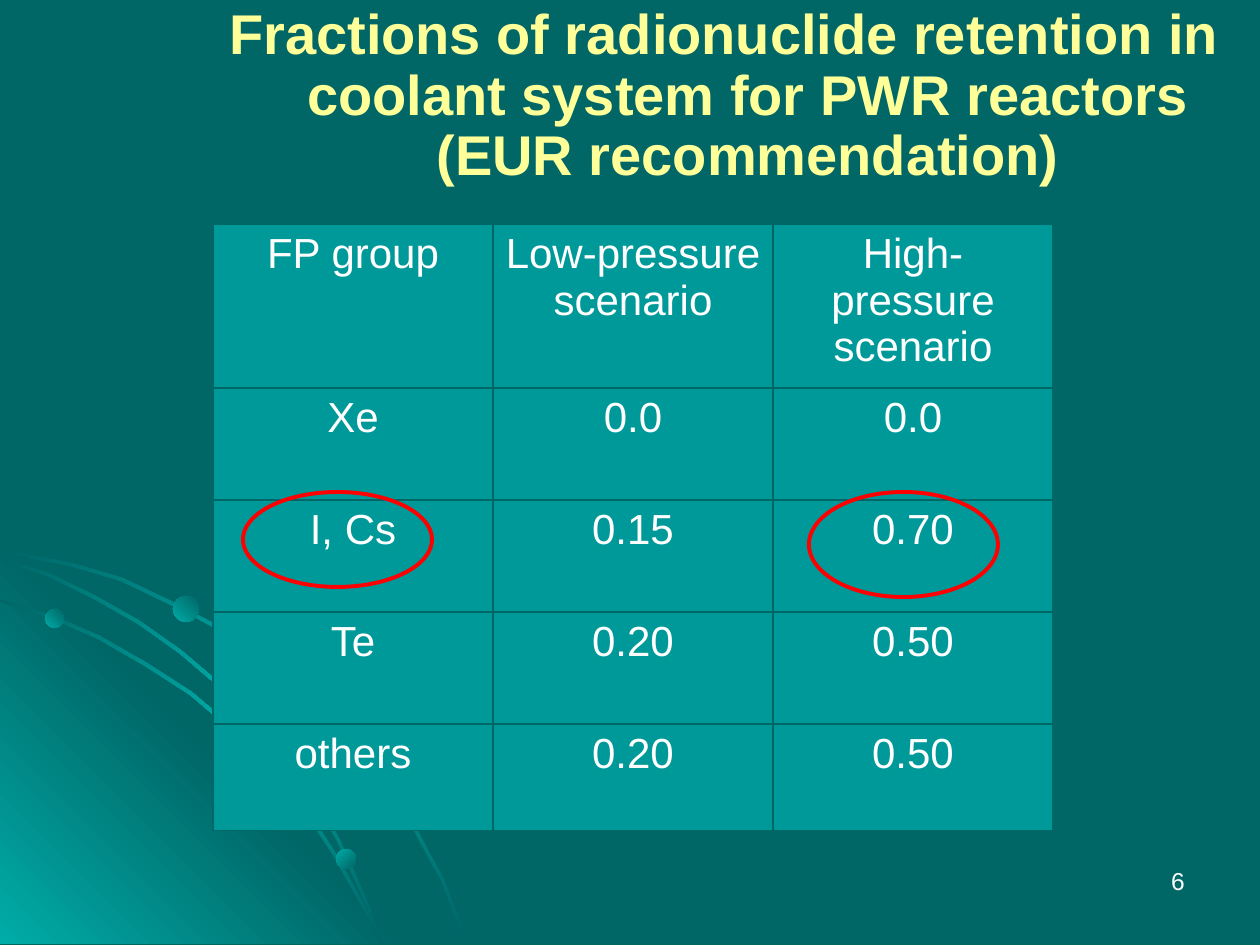
from dataclasses import dataclass

from lxml.etree import SubElement
from pptx import Presentation
from pptx.dml.color import RGBColor
from pptx.enum.shapes import MSO_SHAPE
from pptx.enum.text import MSO_ANCHOR, MSO_AUTO_SIZE, PP_ALIGN
from pptx.oxml.ns import qn
from pptx.util import Emu, Pt

PX = 914400 / 126
WIDTH, HEIGHT = 1260, 945


@dataclass(frozen=True)
class Theme:
    font: str = "Arial"
    background: str = "006666"
    glow: str = "00ACA8"
    cell: str = "009999"
    text: str = "FFFFFF"
    title: str = "FFFF99"
    mark: str = "FF0000"
    title_size: int = 32
    table_size: int = 24
    number_size: int = 14
    mark_width: float = 2.25
    border_width: float = 1


def px(length):
    return Emu(round(length * PX))


class SlideBuilder:
    def __init__(self, slide, theme):
        self.slide, self.theme = slide, theme
        fill = slide.background.fill
        fill.solid()
        fill.fore_color.rgb = RGBColor.from_string(theme.background)

    def style(self, para, size, color, align, bold=False):
        para.alignment = align
        font = para.font
        font.name, font.size, font.bold = self.theme.font, Pt(size), bold
        font.color.rgb = RGBColor.from_string(color)

    def gradient(self, shape, colors, angle):
        """Spread the colours evenly; the angle runs counter-clockwise."""
        shape.shadow.inherit = False
        shape.line.fill.background()
        shape.fill.gradient()
        shape.fill.gradient_angle = angle
        stops = shape._element.spPr.find(".//" + qn("a:gsLst"))
        for stop in list(stops):
            stops.remove(stop)
        for index, color in enumerate(colors):
            position = str(100000 * index // (len(colors) - 1))
            stop = SubElement(stops, qn("a:gs"), pos=position)
            SubElement(stop, qn("a:srgbClr"), val=color)

    def outline(self, points, colors, angle):
        corners = [(px(x), px(y)) for x, y in points]
        builder = self.slide.shapes.build_freeform(*corners[0], scale=1.0)
        builder.add_line_segments(corners[1:], close=True)
        self.gradient(builder.convert_to_shape(), colors, angle)

    def orbit(self, edge):
        """A thin band between an outer edge and the same edge moved inwards."""
        inner = [(max(x - 2, 0), min(y + 3, HEIGHT - 1)) for x, y in edge]
        dark, glow = self.theme.background, self.theme.glow
        self.outline(edge + inner[::-1], (dark, glow, dark), 315)

    def ellipse(self, left, top, width, height):
        return self.slide.shapes.add_shape(
            MSO_SHAPE.OVAL, px(left), px(top), px(width), px(height))

    def ball(self, left, top, size, angle):
        self.gradient(self.ellipse(left, top, size, size),
                      (self.theme.glow, self.theme.background), angle)

    def mark(self, left, top, width, height):
        ring = self.ellipse(left, top, width, height)
        ring.shadow.inherit = False
        ring.fill.background()
        ring.line.color.rgb = RGBColor.from_string(self.theme.mark)
        ring.line.width = Pt(self.theme.mark_width)

    def title(self, text, left, top, width, height, indent):
        box = self.slide.shapes.title
        box.left, box.top, box.width, box.height = map(px, (left, top, width, height))
        frame = box.text_frame
        frame.text = text
        frame.word_wrap = True
        frame.auto_size = MSO_AUTO_SIZE.NONE
        frame.vertical_anchor = MSO_ANCHOR.TOP
        para = frame.paragraphs[0]
        properties = para._p.get_or_add_pPr()
        properties.set("marL", str(px(indent)))
        properties.set("indent", str(-px(indent)))
        para.line_spacing = 0.9
        self.style(para, self.theme.title_size, self.theme.title, PP_ALIGN.CENTER, True)

    def page_number(self, text, left, top, width, height):
        box = self.slide.shapes.add_textbox(px(left), px(top), px(width), px(height))
        box.text_frame.word_wrap = True
        para = box.text_frame.paragraphs[0]
        para.text = text
        self.style(para, self.theme.number_size, self.theme.text, PP_ALIGN.RIGHT)

    def border(self, cell):
        properties = cell._tc.get_or_add_tcPr()
        for side in ("lnL", "lnR", "lnT", "lnB"):
            line = SubElement(properties, qn(f"a:{side}"),
                              w=str(Pt(self.theme.border_width)))
            fill = SubElement(line, qn("a:solidFill"))
            SubElement(fill, qn("a:srgbClr"), val=self.theme.background)

    def table(self, rows, left, top, column_width, row_heights):
        table = self.slide.shapes.add_table(
            len(rows), len(rows[0]), px(left), px(top),
            px(column_width * len(rows[0])), px(sum(row_heights))).table
        table.first_row = table.horz_banding = False
        for column in table.columns:
            column.width = px(column_width)
        for row, height, values in zip(table.rows, row_heights, rows):
            row.height = px(height)
            for cell, value in zip(row.cells, values):
                self.border(cell)
                cell.fill.solid()
                cell.fill.fore_color.rgb = RGBColor.from_string(self.theme.cell)
                cell.text = value
                self.style(cell.text_frame.paragraphs[0], self.theme.table_size,
                           self.theme.text, PP_ALIGN.CENTER)


OUTER_ORBIT = [(0, 548), (35, 556), (72, 563), (123, 578), (171, 601), (219, 626),
               (263, 656), (305, 690), (343, 728), (378, 770), (410, 816),
               (427, 848), (444, 879), (456, 911), (469, 944)]
INNER_ORBIT = [(0, 599), (52, 615), (100, 636), (147, 663), (192, 692), (232, 726),
               (271, 764), (305, 806), (335, 852), (360, 897), (373, 920), (382, 944)]
MIDDLE_ORBIT = [(0, 557), (49, 573), (96, 596), (140, 621), (181, 650), (221, 684),
                (257, 722), (289, 760), (320, 805), (339, 838), (355, 873),
                (370, 907), (382, 944)]
RETENTION = [
    ("FP group", "Low-pressure scenario", "High-pressure scenario"),
    ("Xe", "0.0", "0.0"),
    ("I, Cs", "0.15", "0.70"),
    ("Te", "0.20", "0.50"),
    ("others", "0.20", "0.50"),
]


def main():
    deck = Presentation()
    deck.slide_width, deck.slide_height = px(WIDTH), px(HEIGHT)
    theme = Theme()
    page = SlideBuilder(deck.slides.add_slide(deck.slide_layouts[5]), theme)

    # Corner decoration
    page.orbit(OUTER_ORBIT)
    page.outline([(0, 538), (406, 944), (0, 944)],
                 (theme.glow, theme.background, theme.glow), 45)
    page.orbit(INNER_ORBIT)
    page.orbit(MIDDLE_ORBIT)
    page.ball(45, 609, 19, 45)
    page.ball(336, 849, 20, 315)
    page.ball(173, 596, 26, 45)

    # Title and page number
    page.title("Fractions of radionuclide retention in coolant system for PWR "
               "reactors (EUR recommendation)", 189, 0, 1071, 84, indent=47)
    page.page_number("6", 903, 860, 294, 63)

    # Retention table with the key values ringed
    page.table(RETENTION, 213, 224, 280, [112] * 4 + [107])
    page.mark(243, 492, 189, 95)
    page.mark(809, 492, 189, 105)

    deck.save("out.pptx")


if __name__ == "__main__":
    main()
